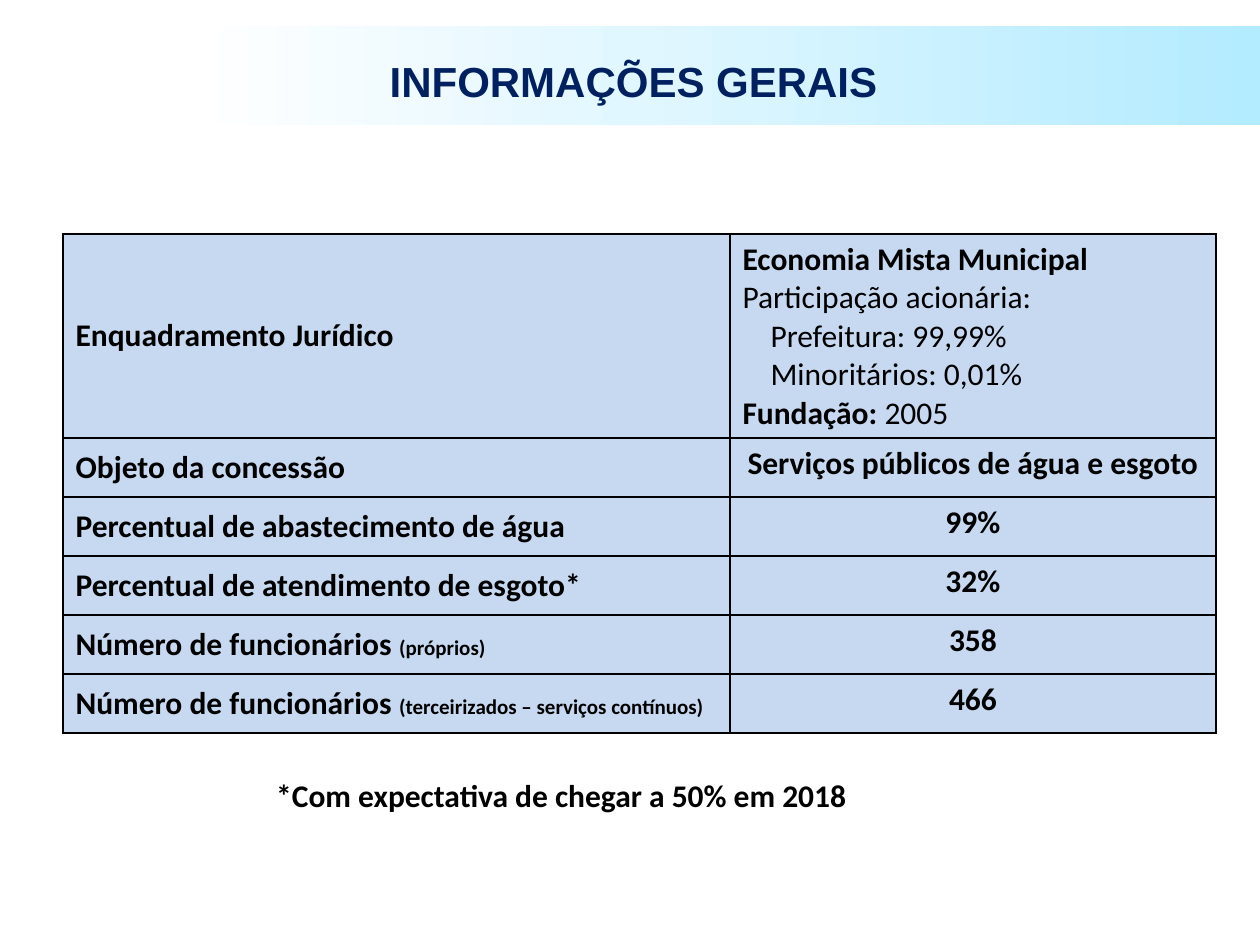
"""Build the general information slide with its table of company facts."""
import copy
from dataclasses import dataclass

import lxml.etree
import pptx
import pptx.dml.color
import pptx.enum.shapes
import pptx.enum.text
import pptx.oxml.ns
import pptx.util
from pptx.enum.text import MSO_ANCHOR, PP_ALIGN

PIXELS_PER_INCH = 126
BLACK = pptx.dml.color.RGBColor(0x00, 0x00, 0x00)
NAVY = pptx.dml.color.RGBColor(0x00, 0x20, 0x60)
CELL_BLUE = pptx.dml.color.RGBColor(0xC6, 0xD9, 0xF1)
BANNER_STOPS = (
    (0, pptx.dml.color.RGBColor(0xB3, 0xEB, 0xFF)),
    (0.5, pptx.dml.color.RGBColor(0xE1, 0xF7, 0xFF)),
    (0.85, pptx.dml.color.RGBColor(0xFF, 0xFF, 0xFF)),
)


@dataclass(frozen=True)
class Span:
    text: str
    bold: bool = True
    size: int = 18


@dataclass(frozen=True)
class Line:
    spans: tuple[Span, ...]
    indent: int = 0
    align: PP_ALIGN = PP_ALIGN.LEFT
    font: str = "Calibri"
    color: pptx.dml.color.RGBColor = BLACK


@dataclass(frozen=True)
class Fact:
    label: Line
    value: tuple[Line, ...]


def label(text: str, note: str = "") -> Line:
    return Line((Span(text), Span(note, size=12)) if note else (Span(text),))


def centred(text: str) -> tuple[Line, ...]:
    return (Line((Span(text),), align=PP_ALIGN.CENTER),)


FACTS = (
    Fact(label("Enquadramento Jurídico"), (
        Line((Span("Economia Mista Municipal"),)),
        Line((Span("Participação acionária:", bold=False),)),
        Line((Span("Prefeitura: 99,99%", bold=False),), indent=28),
        Line((Span("Minoritários: 0,01%", bold=False),), indent=28),
        Line((Span("Fundação:"), Span(" 2005", bold=False))),
    )),
    Fact(label("Objeto da concessão"), centred("Serviços públicos de água e esgoto")),
    Fact(label("Percentual de abastecimento de água"), centred("99%")),
    Fact(label("Percentual de atendimento de esgoto*"), centred("32%")),
    Fact(label("Número de funcionários ", "(próprios)"), centred("358")),
    Fact(label("Número de funcionários ", "(terceirizados – serviços contínuos)"), centred("466")),
)
COLUMN_WIDTHS = (667, 486)
ROW_HEIGHTS = (204,) + (59,) * (len(FACTS) - 1)


def px(length: int) -> int:
    return round(length * pptx.util.Inches(1) / PIXELS_PER_INCH)


def write_lines(frame, lines: tuple[Line, ...]) -> None:
    for index, line in enumerate(lines):
        para = frame.add_paragraph() if index else frame.paragraphs[0]
        para.alignment = line.align
        if line.indent:
            para._p.get_or_add_pPr().set("marL", str(px(line.indent)))
        para.font.name = line.font
        para.font.color.rgb = line.color
        for span in line.spans:
            run = para.add_run()
            run.text = span.text
            run.font.size = pptx.util.Pt(span.size)
            run.font.bold = span.bold


def add_banner(page) -> None:
    banner = page.shapes.add_shape(
        pptx.enum.shapes.MSO_SHAPE.RECTANGLE, 0, px(26), px(1260), px(99))
    banner.shadow.inherit = False
    banner.line.fill.background()
    banner.fill.gradient()
    banner.fill.gradient_angle = 180
    stop_list = banner._element.spPr.find(".//" + pptx.oxml.ns.qn("a:gsLst"))
    stop_list.append(copy.deepcopy(stop_list[-1]))
    for stop, (position, color) in zip(banner.fill.gradient_stops, BANNER_STOPS):
        stop.position = position
        stop.color.rgb = color


def add_text(page, left: int, top: int, width: int, height: int, line: Line):
    box = page.shapes.add_textbox(px(left), px(top), px(width), px(height))
    box.text_frame.word_wrap = True
    write_lines(box.text_frame, (line,))
    return box


def add_borders(cell) -> None:
    properties = cell._tc.get_or_add_tcPr()
    for side in ("a:lnL", "a:lnR", "a:lnT", "a:lnB"):
        border = lxml.etree.SubElement(
            properties, pptx.oxml.ns.qn(side), w=str(pptx.util.Pt(1)))
        fill = lxml.etree.SubElement(border, pptx.oxml.ns.qn("a:solidFill"))
        lxml.etree.SubElement(fill, pptx.oxml.ns.qn("a:srgbClr"), val=str(BLACK))


def add_facts(page, left: int, top: int) -> None:
    table = page.shapes.add_table(
        len(FACTS), len(COLUMN_WIDTHS), px(left), px(top),
        px(sum(COLUMN_WIDTHS)), px(sum(ROW_HEIGHTS))).table
    table.first_row = False
    table.horz_banding = False
    for column, width in zip(table.columns, COLUMN_WIDTHS):
        column.width = px(width)
    for row, height, fact in zip(table.rows, ROW_HEIGHTS, FACTS):
        row.height = px(height)
        for cell, lines in zip(row.cells, ((fact.label,), fact.value)):
            add_borders(cell)
            cell.fill.solid()
            cell.fill.fore_color.rgb = CELL_BLUE
            write_lines(cell.text_frame, lines)
        row.cells[0].vertical_anchor = MSO_ANCHOR.MIDDLE


def main() -> None:
    deck = pptx.Presentation()
    deck.slide_width, deck.slide_height = px(1260), px(945)
    page = deck.slides.add_slide(deck.slide_layouts[6])
    add_banner(page)
    title = add_text(page, 98, 45, 1071, 86, Line(
        (Span("INFORMAÇÕES GERAIS", size=24),),
        align=PP_ALIGN.CENTER, font="Arial", color=NAVY))
    title.text_frame.margin_top = px(11)
    add_facts(page, 63, 234)
    add_text(page, 115, 770, 893, 50,
             *centred("*Com expectativa de chegar a 50% em 2018"))
    deck.save("out.pptx")


if __name__ == "__main__":
    main()
